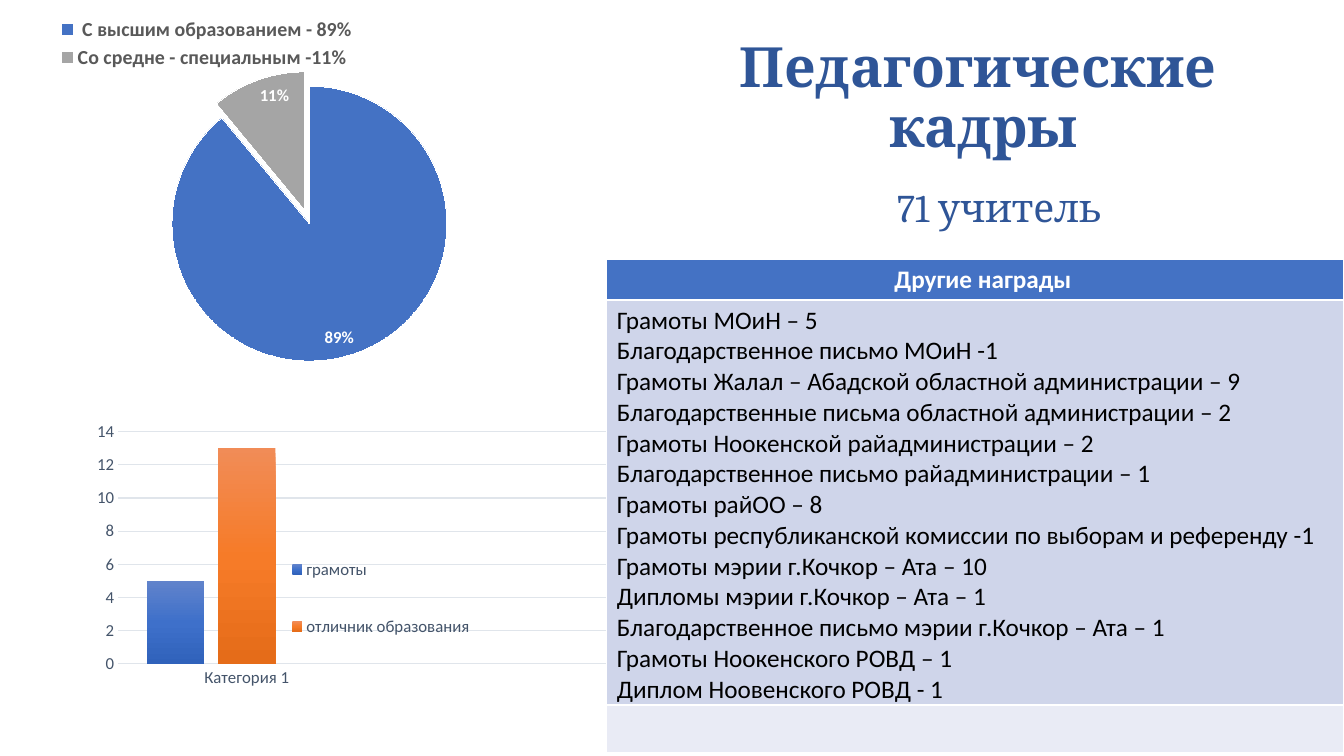
from lxml.etree import SubElement
from pptx import Presentation
from pptx.chart.data import CategoryChartData
from pptx.dml.color import RGBColor
from pptx.enum.chart import XL_CHART_TYPE, XL_LABEL_POSITION, XL_LEGEND_POSITION, XL_TICK_MARK
from pptx.enum.text import MSO_ANCHOR, MSO_AUTO_SIZE, PP_ALIGN
from pptx.oxml.ns import qn
from pptx.util import Cm, Pt

BLUE = "4472C4"
NAVY = "2F5597"
SLATE = "44546A"
GRID = "E0E5EB"
WHITE = "FFFFFF"

EDUCATION = [
    (" С высшим образованием - 89%", 89, BLUE, 0),
    ("Со средне - специальным -11%", 11, "A5A5A5", 11),
]
AWARD_SERIES = [
    ("грамоты", 5, ["6183CB", "3E70CA", "3062BB"]),
    ("отличник образования", 13, ["F18C57", "F67B28", "E56C19"]),
    ("Series 3", None, ["AFAFAF", "A5A5A5", "939393"]),
]
OTHER_AWARDS = [
    "Грамоты МОиН – 5",
    "Благодарственное письмо МОиН -1",
    "Грамоты Жалал – Абадской областной администрации – 9",
    "Благодарственные письма областной администрации – 2",
    "Грамоты Ноокенской райадминистрации – 2",
    "Благодарственное письмо райадминистрации – 1",
    "Грамоты райОО – 8",
    "Грамоты республиканской комиссии по выборам и референду -1",
    "Грамоты мэрии г.Кочкор – Ата – 10",
    "Дипломы мэрии г.Кочкор – Ата – 1",
    "Благодарственное письмо мэрии г.Кочкор – Ата – 1",
    "Грамоты Ноокенского РОВД – 1",
    "Диплом Ноовенского РОВД - 1",
]


def color(value):
    return RGBColor.from_string(value)


def set_font(font, name, size, value, bold=False):
    font.name = name
    font.size = Pt(size)
    font.bold = bold
    font.color.rgb = color(value)


def add_text(page, place, text, size, bold=False, align=PP_ALIGN.LEFT):
    box = page.shapes.add_textbox(*map(Cm, place))
    frame = box.text_frame
    frame.word_wrap = True
    frame.auto_size = MSO_AUTO_SIZE.NONE
    frame.vertical_anchor = MSO_ANCHOR.MIDDLE
    para = frame.paragraphs[0]
    para.text = text
    para.alignment = align
    para.line_spacing = 0.9
    for span in para.runs:
        set_font(span.font, "Cambria", size, NAVY, bold)


def set_layout(parent, index, area, inner=False):
    for old in parent.findall(qn("c:layout")):
        parent.remove(old)
    layout = SubElement(parent, qn("c:layout"))
    parent.insert(index, layout)
    manual = SubElement(layout, qn("c:manualLayout"))
    if inner:
        SubElement(manual, qn("c:layoutTarget")).set("val", "inner")
    for mode in ("xMode", "yMode"):
        SubElement(manual, qn(f"c:{mode}")).set("val", "edge")
    for key, value in zip("xywh", area):
        SubElement(manual, qn(f"c:{key}")).set("val", str(value))


def add_chart(page, kind, place, categories, series, plot_area):
    data = CategoryChartData()
    data.categories = categories
    for name, values in series:
        data.add_series(name, values)
    chart = page.shapes.add_chart(kind, *map(Cm, place), data).chart
    chart.has_title = False
    set_font(chart.font, "Calibri", 10, "000000")
    set_layout(chart._chartSpace.chart.plotArea, 0, plot_area, inner=True)
    return chart


def add_legend(chart, position, area, size, value, bold=False, hidden=()):
    chart.has_legend = True
    legend = chart.legend
    legend.position = position
    legend.include_in_layout = False
    set_font(legend.font, "Calibri", size, value, bold)
    element = legend._element
    for row, index in enumerate(hidden, 1):
        entry = SubElement(element, qn("c:legendEntry"))
        SubElement(entry, qn("c:idx")).set("val", str(index))
        SubElement(entry, qn("c:delete")).set("val", "1")
        element.insert(row, entry)
    set_layout(element, 1 + len(hidden), area)


def set_explosion(element, anchor, amount):
    explosion = SubElement(element, qn("c:explosion"))
    explosion.set("val", str(amount))
    element.find(qn(anchor)).addnext(explosion)


def set_gradient(fill, colors):
    fill.gradient()
    fill.gradient_angle = 270
    stops = fill.gradient_stops._gsLst
    for stop in list(stops):
        stops.remove(stop)
    for position, value in zip((0, 50000, 100000), colors):
        stop = SubElement(stops, qn("a:gs"))
        stop.set("pos", str(position))
        SubElement(stop, qn("a:srgbClr")).set("val", value)


def add_education_pie(page):
    names, values, colors, explosions = zip(*EDUCATION)
    chart = add_chart(page, XL_CHART_TYPE.PIE, (-0.13, 0.05, 15.7, 9.47), names,
                      [("Series 1", values)], (0.26, 0.18, 0.49, 0.82))
    add_legend(chart, XL_LEGEND_POSITION.TOP, (0.08, 0.03, 0.52, 0.16), 14.2, "595959", True)
    plot = chart.plots[0]
    plot.vary_by_categories = True
    series = plot.series[0]
    for index, (value, explosion) in enumerate(zip(colors, explosions)):
        point = series.points[index]
        point.format.fill.solid()
        point.format.fill.fore_color.rgb = color(value)
        point.format.line.color.rgb = color(WHITE)
        set_explosion(series._element.findall(qn("c:dPt"))[index], "c:idx", explosion)
    set_explosion(series._element, "c:tx", 11)
    labels = series.data_labels
    labels.show_percentage = True
    labels.show_value = False
    labels.number_format = "0%"
    labels.number_format_is_linked = False
    labels.position = XL_LABEL_POSITION.INSIDE_END
    set_font(labels.font, "Calibri", 12, WHITE, True)


def add_award_columns(page):
    series = [(name, (value, None, None, None)) for name, value, _ in AWARD_SERIES]
    chart = add_chart(page, XL_CHART_TYPE.COLUMN_CLUSTERED, (-0.13, 9.7, 29.06, 8.66),
                      ["Категория 1", "", "", ""], series, (0.107, 0.136, 0.893, 0.676))
    add_legend(chart, XL_LEGEND_POSITION.BOTTOM, (0.25, 0.4, 0.17, 0.44), 12, SLATE, hidden=[2])
    plot = chart.plots[0]
    plot.vary_by_categories = False
    plot.gap_width = 100
    plot.overlap = -24
    for bars, (_, _, colors) in zip(plot.series, AWARD_SERIES):
        set_gradient(bars.format.fill, colors)
    for axis in (chart.category_axis, chart.value_axis):
        axis.major_tick_mark = XL_TICK_MARK.NONE
        set_font(axis.tick_labels.font, "Calibri", 12, SLATE)
    scale = chart.value_axis
    scale.minimum_scale, scale.maximum_scale, scale.major_unit = 0, 14, 2
    scale.format.line.fill.background()
    for line in (chart.category_axis.format.line, scale.major_gridlines.format.line):
        line.color.rgb = color(GRID)
        line.width = Pt(0.75)


def fill_cell(cell, fill, lines=(), value="000000", bold=False, align=PP_ALIGN.LEFT):
    cell.fill.solid()
    cell.fill.fore_color.rgb = color(fill)
    cell.text_frame.text = "\n".join(lines)
    for para in cell.text_frame.paragraphs:
        para.alignment = align
        for span in para.runs:
            set_font(span.font, "Calibri", 18, value, bold)


def add_award_table(page):
    heights = [Cm(1.03), Cm(10.17), Cm(1.19)]
    table = page.shapes.add_table(3, 1, Cm(15.29), Cm(6.53), Cm(18.57), sum(heights)).table
    table.horz_banding = False
    for row, height in zip(table.rows, heights):
        row.height = height
    header, awards, footer = (table.cell(row, 0) for row in range(3))
    fill_cell(header, BLUE, ["Другие награды"], WHITE, True, PP_ALIGN.CENTER)
    header.margin_left = Cm(0.65)
    fill_cell(awards, "CFD5EA", OTHER_AWARDS)
    awards.margin_bottom = 0
    fill_cell(footer, "E9EBF5")


def main():
    deck = Presentation()
    deck.slide_width, deck.slide_height = Cm(33.87), Cm(19.05)
    page = deck.slides.add_slide(deck.slide_layouts[6])
    add_text(page, (17.37, 0.99, 14.86, 3.02), "Педагогические \vкадры", 39.6, True, PP_ALIGN.CENTER)
    add_education_pie(page)
    add_text(page, (22.35, 4.55, 6.58, 1.45), "71 учитель", 28)
    add_award_columns(page)
    add_award_table(page)
    deck.save("out.pptx")


if __name__ == "__main__":
    main()
